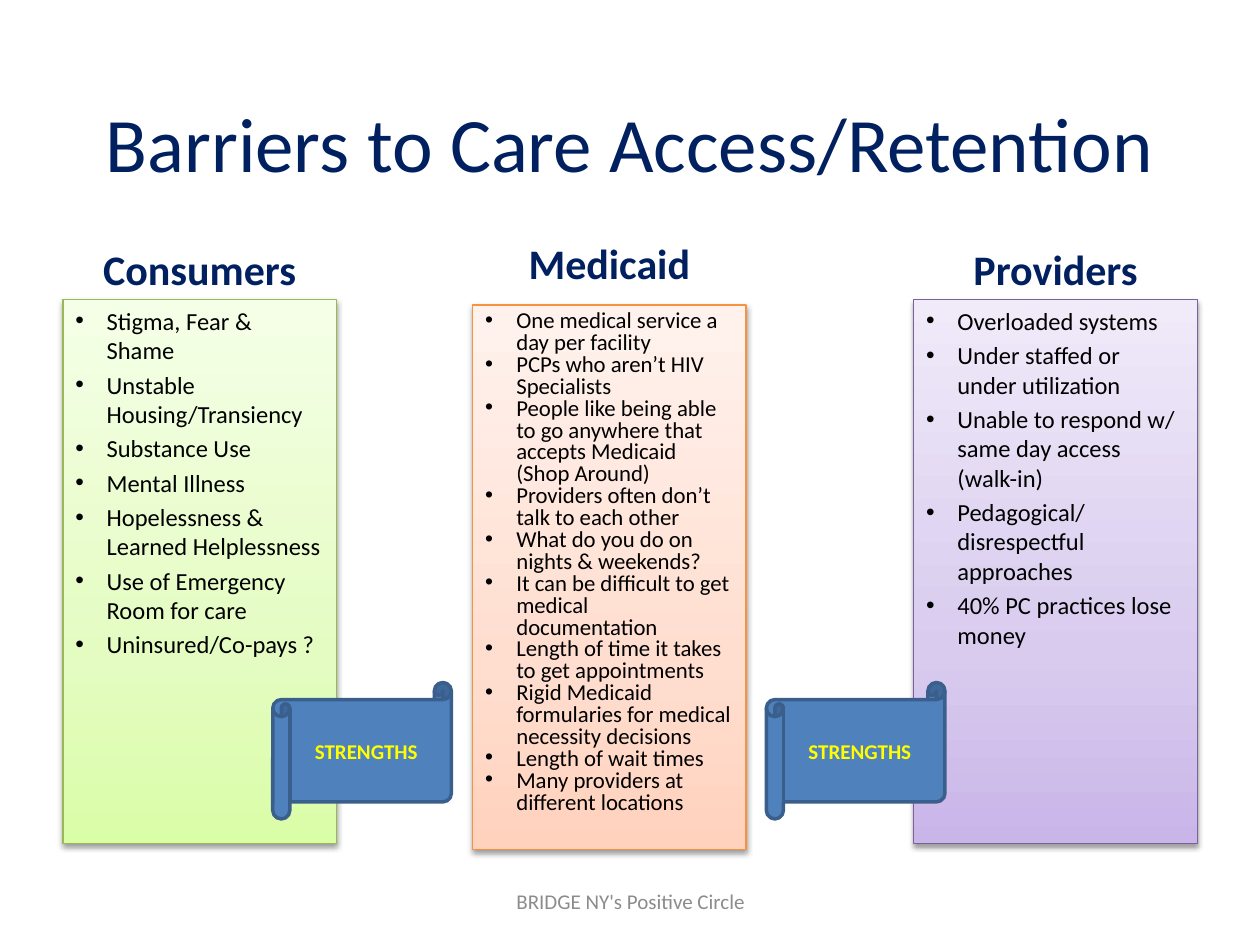
import copy

import pptx
import pptx.dml.color
import pptx.enum.shapes
import pptx.enum.text
import pptx.oxml
import pptx.oxml.ns
import pptx.util

Cm = pptx.util.Cm
Pt = pptx.util.Pt
RGBColor = pptx.dml.color.RGBColor
MSO_ANCHOR = pptx.enum.text.MSO_ANCHOR
PP_ALIGN = pptx.enum.text.PP_ALIGN
MSO_SHAPE = pptx.enum.shapes.MSO_SHAPE
qn = pptx.oxml.ns.qn

NAVY = RGBColor(0x00, 0x20, 0x60)
BLACK = RGBColor(0x00, 0x00, 0x00)
GRAY = RGBColor(0x8C, 0x8C, 0x8C)
YELLOW = RGBColor(0xFF, 0xFF, 0x00)
BLUE = RGBColor(0x4F, 0x81, 0xBD)
DARK_BLUE = RGBColor(0x3A, 0x5F, 0x8C)
GREEN_LINE = RGBColor(0x98, 0xB9, 0x55)
ORANGE_LINE = RGBColor(0xF6, 0x92, 0x40)
PURPLE_LINE = RGBColor(0x7D, 0x60, 0xA0)
GREENS = RGBColor(0xDA, 0xFD, 0xA7), RGBColor(0xE4, 0xFC, 0xC2), RGBColor(0xF5, 0xFF, 0xE7)
ORANGES = RGBColor(0xFF, 0xD2, 0xBD), RGBColor(0xFF, 0xDE, 0xD0), RGBColor(0xFF, 0xF2, 0xED)
PURPLES = RGBColor(0xC9, 0xB5, 0xE8), RGBColor(0xD8, 0xCB, 0xEE), RGBColor(0xF0, 0xEA, 0xF9)

SHADOW = (
    f'<a:outerShdw {pptx.oxml.ns.nsdecls("a")} blurRad="40000" dist="20000" '
    'dir="5400000" rotWithShape="0"><a:srgbClr val="000000">'
    '<a:alpha val="38000"/></a:srgbClr></a:outerShdw>'
)
BULLET_FONT = f'<a:buFont {pptx.oxml.ns.nsdecls("a")} typeface="Arial"/>'
BULLET = f'<a:buChar {pptx.oxml.ns.nsdecls("a")} char="•"/>'


def write(shape, text, size, color, bold=False, align=PP_ALIGN.CENTER, anchor=MSO_ANCHOR.MIDDLE):
    text_frame = shape.text_frame
    text_frame.word_wrap = True
    text_frame.vertical_anchor = anchor
    text_frame.text = text
    for paragraph in text_frame.paragraphs:
        paragraph.alignment = align
        font = paragraph.runs[0].font
        font.name = "Calibri"
        font.size = Pt(size)
        font.bold = bold
        font.color.rgb = color


presentation = pptx.Presentation()
presentation.slide_width = Cm(25.4)
presentation.slide_height = Cm(19.05)
slide = presentation.slides.add_slide(presentation.slide_layouts[6])

title = slide.shapes.add_textbox(Cm(1.27), Cm(1.27), Cm(22.86), Cm(3.18))
write(title, "Barriers to Care Access/Retention", 44, NAVY)

footer = slide.shapes.add_textbox(Cm(8.69), Cm(17.65), Cm(8.05), Cm(1.02))
write(footer, "BRIDGE NY's Positive Circle", 12, GRAY)

columns = [
    ("Consumers", 1.27, 4.27, 6.04, 5.51, GREENS, GREEN_LINE, 14, 2.8, 1, [
        "Stigma, Fear & Shame",
        "Unstable Housing/Transiency",
        "Substance Use",
        "Mental Illness",
        "Hopelessness & Learned Helplessness",
        "Use of Emergency Room for care",
        "Uninsured/Co-pays ?",
    ]),
    ("Providers", 18.42, 4.27, 6.04, 5.72, PURPLES, PURPLE_LINE, 14, 2.8, 1, [
        "Overloaded systems",
        "Under staffed or under utilization",
        "Unable to respond w/ same day access (walk-in)",
        "Pedagogical/ disrespectful approaches",
        "40% PC practices lose money",
    ]),
    ("Medicaid", 9.53, 4.14, 6.15, 5.51, ORANGES, ORANGE_LINE, 13, 0, 0.8, [
        "One medical service a day per facility",
        "PCPs who aren’t HIV Specialists",
        "People like being able to go anywhere that accepts Medicaid (Shop Around)",
        "Providers often don’t talk to each other",
        "What do you do on nights & weekends?",
        "It can be difficult to get medical documentation",
        "Length of time it takes to get appointments",
        "Rigid Medicaid formularies for medical necessity decisions",
        "Length of wait times",
        "Many providers at different locations",
    ]),
]
for name, left, heading_top, top, width, shades, line_color, size, space, spacing, items in columns:
    heading = slide.shapes.add_textbox(Cm(left), Cm(heading_top), Cm(width), Cm(1.78))
    write(heading, name, 24, NAVY, bold=True, anchor=MSO_ANCHOR.BOTTOM)

    panel = slide.shapes.add_shape(
        MSO_SHAPE.RECTANGLE, Cm(left), Cm(top), Cm(width), Cm(10.97))
    panel.fill.gradient()
    panel.fill.gradient_angle = 90
    stop_list = next(panel._element.spPr.iter(qn("a:gsLst")))
    middle_stop = copy.deepcopy(stop_list[0])
    stop_list.insert(1, middle_stop)
    for stop, position, shade in zip(panel.fill.gradient_stops, (0, 0.35, 1), shades):
        stop.position = position
        stop.color.rgb = shade
    panel.line.color.rgb = line_color
    panel.line.width = Pt(0.75)
    panel.shadow.inherit = False
    effects = panel._element.spPr.find(qn("a:effectLst"))
    effects.append(pptx.oxml.parse_xml(SHADOW))

    write(panel, "\n".join(items), size, BLACK, align=PP_ALIGN.LEFT, anchor=MSO_ANCHOR.TOP)
    for paragraph in panel.text_frame.paragraphs:
        paragraph.space_before = Pt(space)
        paragraph.line_spacing = spacing
        properties = paragraph._p.get_or_add_pPr()
        properties.set("marL", str(Cm(0.63)))
        properties.set("indent", str(Cm(-0.63)))
        properties.append(pptx.oxml.parse_xml(BULLET_FONT))
        properties.append(pptx.oxml.parse_xml(BULLET))

for left in (5.5, 15.45):
    scroll = slide.shapes.add_shape(
        MSO_SHAPE.HORIZONTAL_SCROLL, Cm(left), Cm(13.76), Cm(3.6), Cm(2.75))
    scroll.fill.solid()
    scroll.fill.fore_color.rgb = BLUE
    scroll.line.color.rgb = DARK_BLUE
    scroll.line.width = Pt(2)
    scroll.shadow.inherit = False
    write(scroll, "STRENGTHS", 12, YELLOW, bold=True)

presentation.save("out.pptx")
